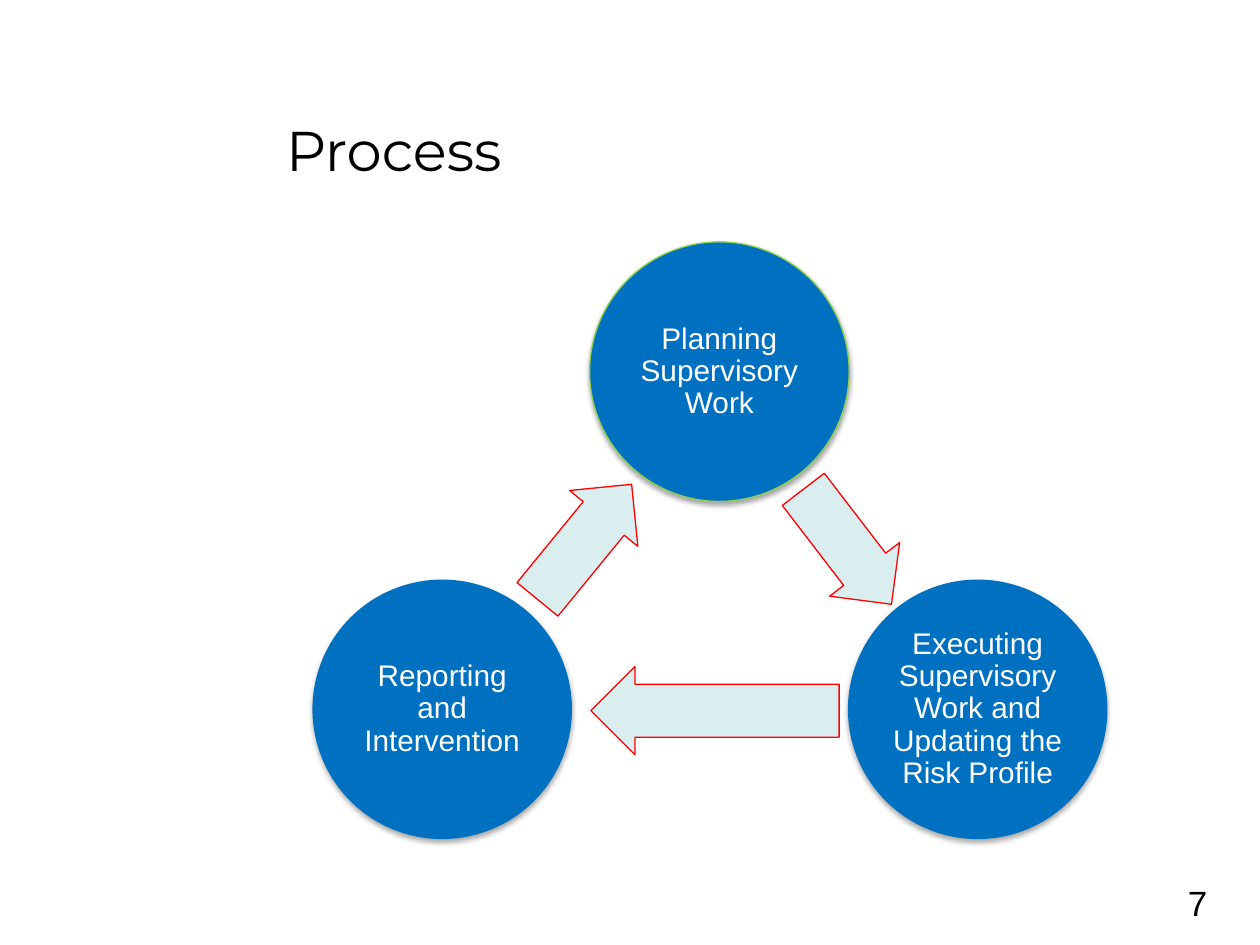
import pptx
import pptx.dml.color
import pptx.enum.shapes
import pptx.enum.text
import pptx.oxml
import pptx.oxml.ns
import pptx.util
from pptx.util import Inches

SHADOW = (
    f'<a:effectLst {pptx.oxml.ns.nsdecls("a")}>'
    '<a:outerShdw blurRad="39370" dist="22860" dir="5400000" rotWithShape="0">'
    '<a:srgbClr val="000000"><a:alpha val="35000"/></a:srgbClr>'
    '</a:outerShdw></a:effectLst>'
)


def rgb(value):
    return pptx.dml.color.RGBColor.from_string(value)


class ProcessSlide:
    """Holds the style and the slide that its methods draw on."""

    blue, pale, red, green = "0070C0", "DAEDEF", "FF0000", "92D050"
    black, white = "000000", "FFFFFF"
    body_font, title_font = "Arial", "Montserrat"
    diameter, arrow_height = 2.06, 0.7

    def __init__(self, prs):
        self.s = prs.slides.add_slide(prs.slide_layouts[5])

    def set_text(self, tf, text, size, color, font, align, anchor):
        tf.word_wrap = True
        tf.auto_size = pptx.enum.text.MSO_AUTO_SIZE.NONE
        tf.vertical_anchor = anchor
        tf.text = text
        p = tf.paragraphs[0]
        p.alignment = align
        f = p.runs[0].font
        f.size = pptx.util.Pt(size)
        f.name = font
        f.color.rgb = rgb(color)
        return p

    def title(self, text, left, top, width, height):
        sp = self.s.shapes.title
        sp.left, sp.top = Inches(left), Inches(top)
        sp.width, sp.height = Inches(width), Inches(height)
        self.set_text(sp.text_frame, text, 32, self.black, self.title_font,
                      pptx.enum.text.PP_ALIGN.LEFT, pptx.enum.text.MSO_ANCHOR.BOTTOM)

    def number(self, text, left, top, width, height):
        sp = self.s.shapes.add_textbox(
            Inches(left), Inches(top), Inches(width), Inches(height))
        self.set_text(sp.text_frame, text, 20, self.black, self.body_font,
                      pptx.enum.text.PP_ALIGN.LEFT, pptx.enum.text.MSO_ANCHOR.TOP)

    def shape(self, kind, left, top, width, height, fill, line=None):
        sp = self.s.shapes.add_shape(
            kind, Inches(left), Inches(top), Inches(width), Inches(height))
        sp.shadow.inherit = False
        sp.fill.solid()
        sp.fill.fore_color.rgb = rgb(fill)
        if line:
            sp.line.color.rgb = rgb(line)
            sp.line.width = pptx.util.Pt(0.75)
        else:
            sp.line.fill.background()
        return sp

    def circle(self, text, left, top, line=None):
        sp = self.shape(pptx.enum.shapes.MSO_SHAPE.OVAL, left, top,
                        self.diameter, self.diameter, self.blue, line)
        props = sp.element.spPr
        props.remove(props.find(pptx.oxml.ns.qn("a:effectLst")))
        props.append(pptx.oxml.parse_xml(SHADOW))
        tf = sp.text_frame
        tf.margin_left = tf.margin_right = Inches(0.02)
        tf.margin_top = tf.margin_bottom = Inches(0.02)
        p = self.set_text(tf, text, 17, self.white, self.body_font,
                          pptx.enum.text.PP_ALIGN.CENTER, pptx.enum.text.MSO_ANCHOR.MIDDLE)
        p.line_spacing = 0.9

    def arrow(self, left, top, width, rotation):
        sp = self.shape(pptx.enum.shapes.MSO_SHAPE.RIGHT_ARROW, left, top,
                        width, self.arrow_height, self.pale, self.red)
        sp.adjustments[0], sp.adjustments[1] = 0.6, 0.5
        sp.rotation = rotation


def main():
    prs = pptx.Presentation()
    prs.slide_width, prs.slide_height = Inches(10), Inches(7.5)
    slide = ProcessSlide(prs)
    slide.number("7", 9.33, 6.95, 0.67, 0.43)
    slide.title("Process", 2.17, 0.42, 7.67, 1.08)
    slide.circle("Planning Supervisory Work", 4.68, 1.92, slide.green)
    slide.arrow(6.15, 3.99, 1.15, 52.5)
    slide.circle("Executing Supervisory Work and Updating the Risk Profile", 6.73, 4.6)
    slide.arrow(4.69, 5.29, 1.97, 180)
    slide.circle("Reporting and Intervention", 2.48, 4.6)
    slide.arrow(4.05, 3.95, 1.18, 309.3)
    prs.save("out.pptx")


if __name__ == "__main__":
    main()
